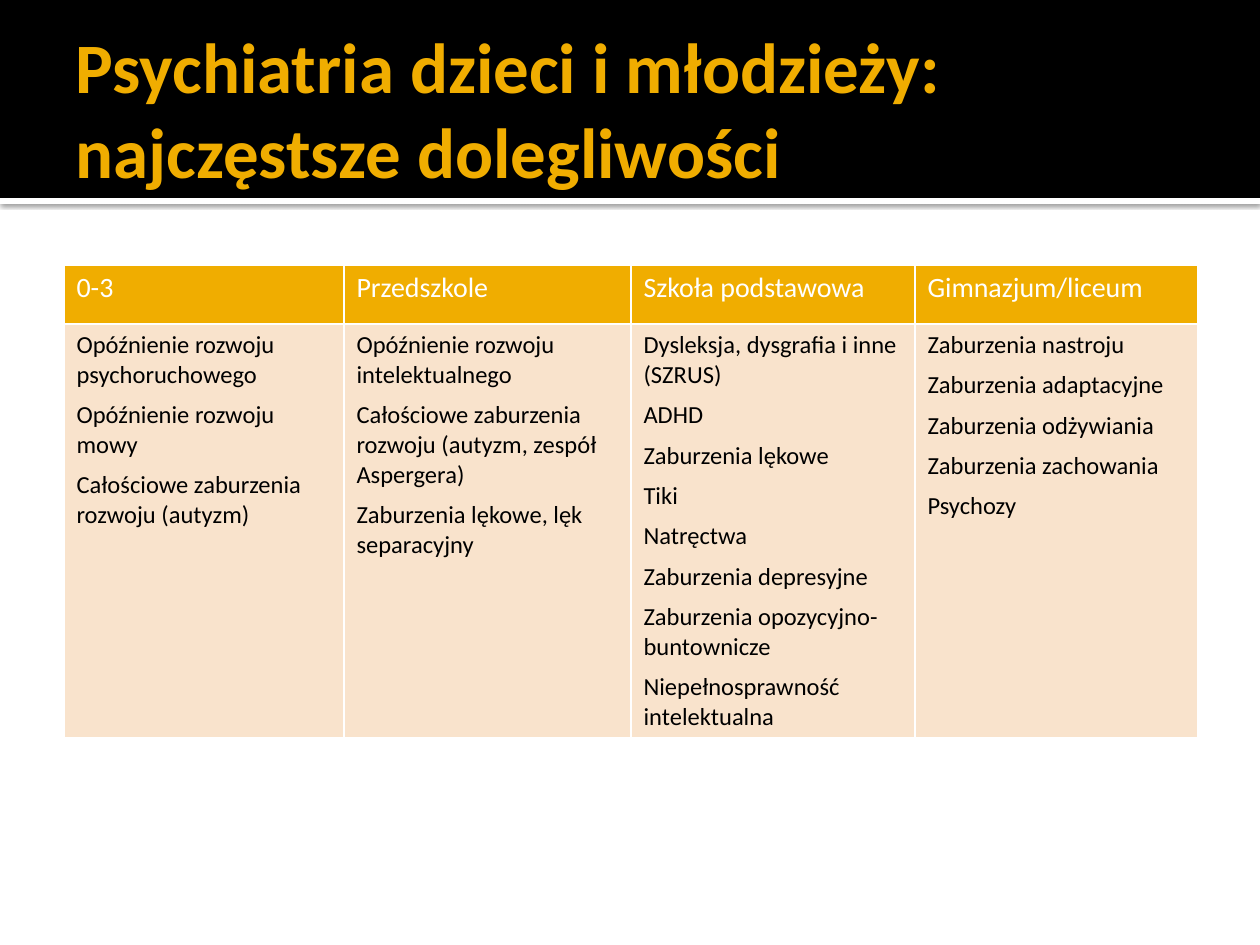
import dataclasses

import pptx
import pptx.dml.color
import pptx.enum.shapes
import pptx.enum.text
import pptx.oxml
import pptx.oxml.ns
import pptx.util

EMU_PER_PX = 914400 / 126


@dataclasses.dataclass(frozen=True)
class Theme:
    font: str = "Calibri"
    accent: str = "F0AD00"
    band: str = "000000"
    light: str = "FFFFFF"
    body_fill: str = "F9E3CC"
    body_text: str = "000000"
    title_size: float = 40.5
    header_size: float = 16
    body_size: float = 14
    paragraph_gap: float = 6
    border_width: float = 1


THEME = Theme()

TITLE = "Psychiatria dzieci i młodzieży: najczęstsze dolegliwości"

# Age group, column width in px, complaints
AGE_GROUPS = [
    ("0-3", 280, [
        "Opóźnienie rozwoju psychoruchowego",
        "Opóźnienie rozwoju mowy",
        "Całościowe zaburzenia rozwoju (autyzm)",
    ]),
    ("Przedszkole", 287, [
        "Opóźnienie rozwoju intelektualnego",
        "Całościowe zaburzenia rozwoju (autyzm, zespół Aspergera)",
        "Zaburzenia lękowe, lęk separacyjny",
    ]),
    ("Szkoła podstawowa", 284, [
        "Dysleksja, dysgrafia i inne (SZRUS)",
        "ADHD",
        "Zaburzenia lękowe",
        "Tiki",
        "Natręctwa",
        "Zaburzenia depresyjne",
        "Zaburzenia opozycyjno-buntownicze",
        "Niepełnosprawność intelektualna",
    ]),
    ("Gimnazjum/liceum", 283, [
        "Zaburzenia nastroju",
        "Zaburzenia adaptacyjne",
        "Zaburzenia odżywiania",
        "Zaburzenia zachowania",
        "Psychozy",
    ]),
]
ROW_HEIGHTS = [59, 413]


def px(length):
    return pptx.util.Emu(round(length * EMU_PER_PX))


def rgb(color):
    return pptx.dml.color.RGBColor.from_string(color)


def format_font(font, size, color, bold=False):
    font.name = THEME.font
    font.size = pptx.util.Pt(size)
    font.bold = bold
    font.color.rgb = rgb(color)


def add_band(slide, top, height, color):
    shape = slide.shapes.add_shape(
        pptx.enum.shapes.MSO_SHAPE.RECTANGLE, px(0), px(top), px(1260), px(height))
    shape.shadow.inherit = False
    shape.fill.solid()
    shape.fill.fore_color.rgb = rgb(color)
    shape.line.fill.background()
    return shape


def add_soft_shadow(shape):
    effects = shape._element.spPr.find(pptx.oxml.ns.qn("a:effectLst"))
    effects.append(pptx.oxml.parse_xml(
        f'<a:outerShdw {pptx.oxml.ns.nsdecls("a")} blurRad="{pptx.util.Pt(2.5)}" '
        f'dist="{pptx.util.Pt(0.8)}" dir="5400000" algn="t" rotWithShape="0">'
        '<a:srgbClr val="000000"><a:alpha val="60000"/></a:srgbClr></a:outerShdw>'))


def set_title(slide, text):
    title = slide.shapes.title
    title.left, title.top, title.width, title.height = px(63), px(21), px(1134), px(173)
    frame = title.text_frame
    frame.text = text
    frame.word_wrap = True
    frame.auto_size = pptx.enum.text.MSO_AUTO_SIZE.NONE
    frame.vertical_anchor = pptx.enum.text.MSO_ANCHOR.MIDDLE
    frame.margin_left = pptx.util.Inches(0.1)
    frame.margin_top = frame.margin_right = frame.margin_bottom = pptx.util.Inches(0.05)
    paragraph = frame.paragraphs[0]
    paragraph.alignment = pptx.enum.text.PP_ALIGN.LEFT
    format_font(paragraph.font, THEME.title_size, THEME.accent, bold=True)
    # Bring the title in front of the bands
    slide.shapes._spTree.append(title._element)


def set_borders(cell):
    properties = cell._tc.get_or_add_tcPr()
    for side in ("lnL", "lnR", "lnT", "lnB"):
        properties.append(pptx.oxml.parse_xml(
            f'<a:{side} {pptx.oxml.ns.nsdecls("a")} w="{pptx.util.Pt(THEME.border_width)}">'
            f'<a:solidFill><a:srgbClr val="{THEME.light}"/></a:solidFill></a:{side}>'))


def fill_cell(cell, lines, size, color, fill, gap=0):
    set_borders(cell)
    cell.fill.solid()
    cell.fill.fore_color.rgb = rgb(fill)
    cell.text_frame.text = "\n".join(lines)
    for paragraph in cell.text_frame.paragraphs:
        paragraph.space_after = pptx.util.Pt(gap)
        format_font(paragraph.font, size, color)


def add_complaints_table(slide):
    table = slide.shapes.add_table(
        len(ROW_HEIGHTS), len(AGE_GROUPS), px(64), px(265),
        px(sum(width for _, width, _ in AGE_GROUPS)), px(sum(ROW_HEIGHTS))).table
    table.horz_banding = False
    for row, height in zip(table.rows, ROW_HEIGHTS):
        row.height = px(height)
    for index, (age_group, width, complaints) in enumerate(AGE_GROUPS):
        table.columns[index].width = px(width)
        fill_cell(table.cell(0, index), [age_group],
                  THEME.header_size, THEME.light, THEME.accent)
        fill_cell(table.cell(1, index), complaints, THEME.body_size,
                  THEME.body_text, THEME.body_fill, THEME.paragraph_gap)


def main():
    presentation = pptx.Presentation()
    presentation.slide_width, presentation.slide_height = px(1260), px(945)
    slide = presentation.slides.add_slide(presentation.slide_layouts[5])

    # Header: white strip with a shadow, black band, title
    add_soft_shadow(add_band(slide, 198, 6, THEME.light))
    add_band(slide, 0, 198, THEME.band)
    set_title(slide, TITLE)

    # Complaints by age group
    add_complaints_table(slide)
    presentation.save("out.pptx")


if __name__ == "__main__":
    main()
